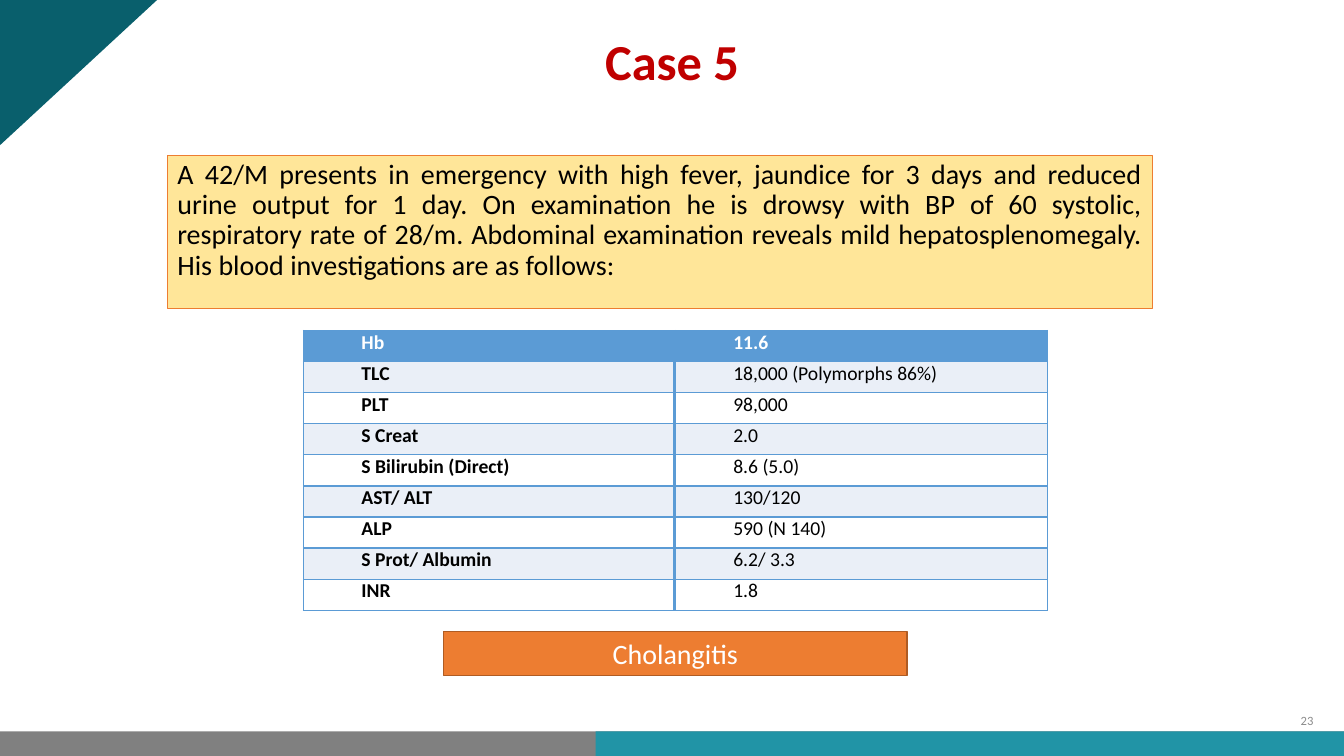
from dataclasses import dataclass

from lxml.etree import SubElement
from pptx import Presentation
from pptx.dml.color import RGBColor as Rgb
from pptx.enum.shapes import MSO_CONNECTOR as Link, MSO_SHAPE as Kind
from pptx.enum.text import MSO_ANCHOR as Anchor, PP_ALIGN as Align
from pptx.oxml import parse_xml
from pptx.oxml.ns import nsdecls, qn
from pptx.shapes.autoshape import Shape
from pptx.slide import Slide
from pptx.table import _Cell as Cell
from pptx.util import Cm, Pt

HUES = {
    "white": "FFFFFF", "black": "000000", "grey": "808080", "pale": "8C8C8C",
    "deep": "095F6C", "teal": "2194A6", "cream": "FFE699", "orange": "ED7D31",
    "rust": "AF5C24", "blue": "5B9BD5", "mist": "EAEFF7", "red": "C00000",
}
WIDE, HIGH = 33.87, 19.05
STORY = (
    "A 42/M presents in emergency with high fever, jaundice for 3 days and reduced "
    "urine output for 1 day. On examination he is drowsy with BP of 60 systolic, "
    "respiratory rate of 28/m. Abdominal examination reveals mild hepatosplenomegaly. "
    "His blood investigations are as follows:"
)
LABS = [
    ("Hb", "11.6"),
    ("TLC", "18,000 (Polymorphs 86%)"),
    ("PLT", "98,000"),
    ("S Creat", "2.0"),
    ("S Bilirubin (Direct)", "8.6 (5.0)"),
    ("AST/ ALT", "130/120"),
    ("ALP", "590 (N 140)"),
    ("S Prot/ Albumin", "6.2/ 3.3"),
    ("INR", "1.8"),
]
LEFT, TOP, COL, TALL = 7.65, 8.33, 9.37, 7.05


@dataclass(frozen=True)
class Box:
    left: float
    top: float
    width: float
    height: float
    fill: str = ""
    edge: str = ""
    weight: float = 0
    text: str = ""
    size: float = 20
    hue: str = "black"
    bold: bool = False
    align: Align = Align.CENTER
    anchor: Anchor = Anchor.MIDDLE
    lines: float = 1.0
    before: float = 0


BOXES = [
    Box(0, 18.43, WIDE, 0.62, "grey"),
    Box(15.01, 18.43, 18.86, 0.62, "teal"),
    Box(4.22, 3.91, 24.81, 3.86, "cream", "orange", 0.5, STORY,
        align=Align.JUSTIFY, anchor=Anchor.TOP, lines=0.9, before=7.5),
    Box(11.18, 15.91, 11.68, 1.12, "orange", "rust", 1, "Cholangitis",
        hue="white", anchor=Anchor.TOP),
    Box(11.68, 0.91, 10.52, 1.5, text="Case 5", size=36, hue="red", bold=True, lines=0.8),
    Box(32.18, 17.65, 1.17, 1.02, text="23", size=9, hue="pale", align=Align.RIGHT),
]


def tint(name: str) -> Rgb:
    return Rgb.from_string(HUES[name])


def style(para, text: str, size: float, hue: str, bold: bool) -> None:
    para.text = text
    font = para.font
    font.name, font.size, font.bold = "Calibri", Pt(size), bold
    font.color.rgb = tint(hue)


def paint(shape: Shape, fill: str, edge: str = "", weight: float = 0) -> None:
    shape.shadow.inherit = False
    shape.fill.solid()
    shape.fill.fore_color.rgb = tint(fill)
    if edge:
        shape.line.color.rgb = tint(edge)
        shape.line.width = Pt(weight)
    else:
        shape.line.fill.background()


def draw_box(slide: Slide, box: Box) -> None:
    place = [Cm(n) for n in (box.left, box.top, box.width, box.height)]
    if box.fill:
        shape = slide.shapes.add_shape(Kind.RECTANGLE, *place)
        paint(shape, box.fill, box.edge, box.weight)
    else:
        shape = slide.shapes.add_textbox(*place)
    if box.text:
        frame = shape.text_frame
        frame.word_wrap, frame.vertical_anchor = True, box.anchor
        para = frame.paragraphs[0]
        style(para, box.text, box.size, box.hue, box.bold)
        para.alignment, para.line_spacing = box.align, box.lines
        para.space_before = Pt(box.before)


def draw_corner(slide: Slide) -> None:
    pen = slide.shapes.build_freeform(0, 0)
    pen.add_line_segments([(Cm(3.96), 0), (0, Cm(3.66))])
    paint(pen.convert_to_shape(), "deep")


def rule_cell(cell: Cell) -> None:
    props = cell._tc.get_or_add_tcPr()
    for spot, side in enumerate("LRTB"):
        props.insert(spot, parse_xml(
            f'<a:ln{side} {nsdecls("a")} w="12700"><a:solidFill>'
            f'<a:srgbClr val="{HUES["blue"]}"/></a:solidFill></a:ln{side}>'))


def draw_labs(slide: Slide) -> None:
    size = len(LABS)
    table = slide.shapes.add_table(
        size, 2, Cm(LEFT), Cm(TOP), Cm(2 * COL), Cm(TALL)).table
    table.horz_banding = False
    for i, pair in enumerate(LABS):
        table.rows[i].height = Cm(TALL / size)
        head = i == 0
        fill = "blue" if head else "mist" if i % 2 else "white"
        for j, text in enumerate(pair):
            cell = table.cell(i, j)
            cell.margin_left = cell.margin_right = Cm(0.19)
            cell.margin_top = cell.margin_bottom = 0
            cell.fill.solid()
            cell.fill.fore_color.rgb = tint(fill)
            rule_cell(cell)
            para = cell.text_frame.paragraphs[0]
            style(para, text, 14, "white" if head else "black", head or j == 0)
            para._p.get_or_add_pPr().set("marL", str(Cm(1.27)))


def draw_split(slide: Slide) -> None:
    mid = Cm(16.99)
    line = slide.shapes.add_connector(
        Link.STRAIGHT, mid, Cm(TOP), mid, Cm(TOP + TALL))
    line.line.color.rgb = tint("blue")
    line.line.width = Pt(1.5)
    SubElement(line._element.spPr, qn("a:effectLst"))


def main() -> None:
    deck = Presentation()
    deck.slide_width, deck.slide_height = Cm(WIDE), Cm(HIGH)
    slide = deck.slides.add_slide(deck.slide_layouts[6])
    draw_corner(slide)
    for box in BOXES:
        draw_box(slide, box)
    draw_labs(slide)
    draw_split(slide)
    deck.save("out.pptx")


if __name__ == "__main__":
    main()
